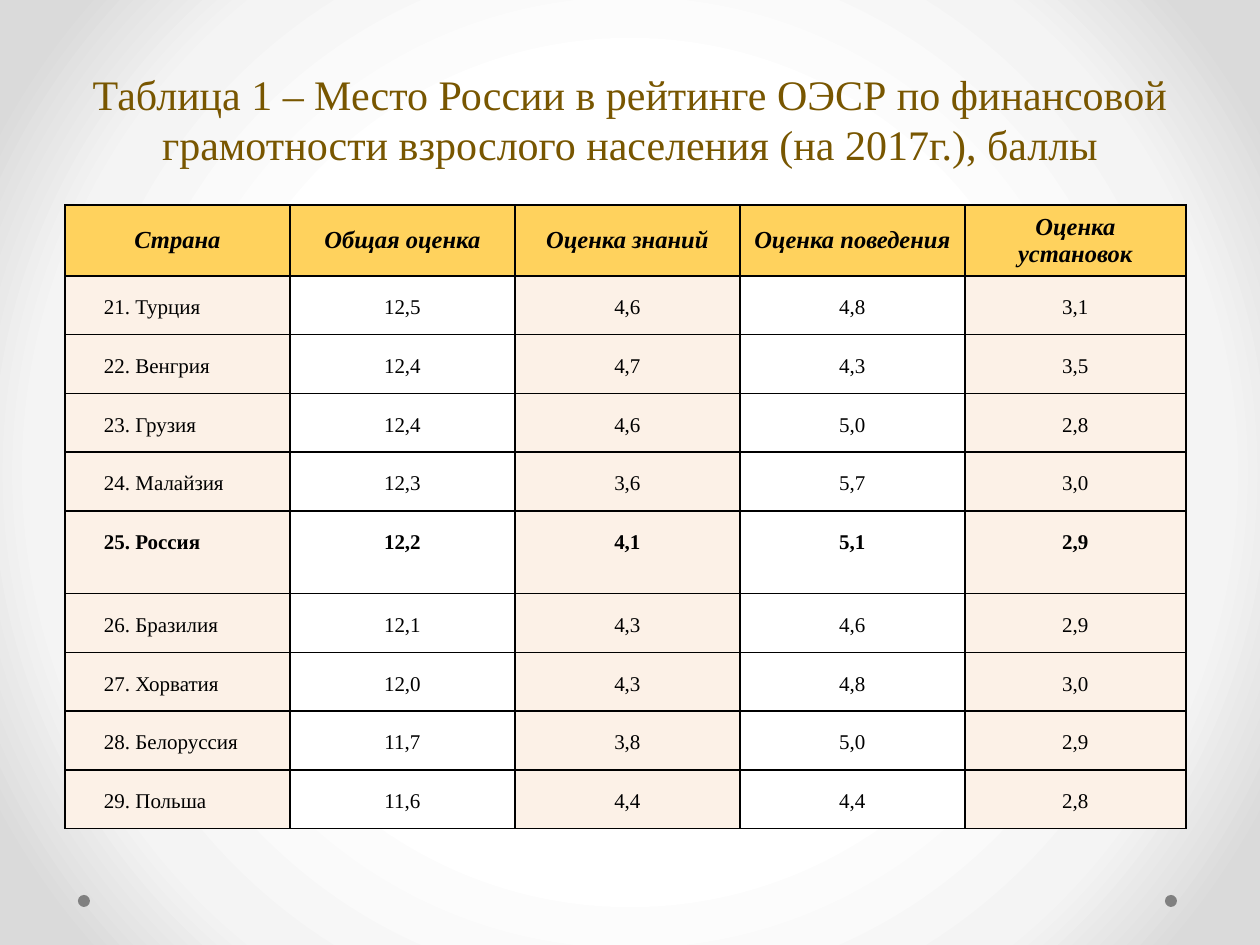
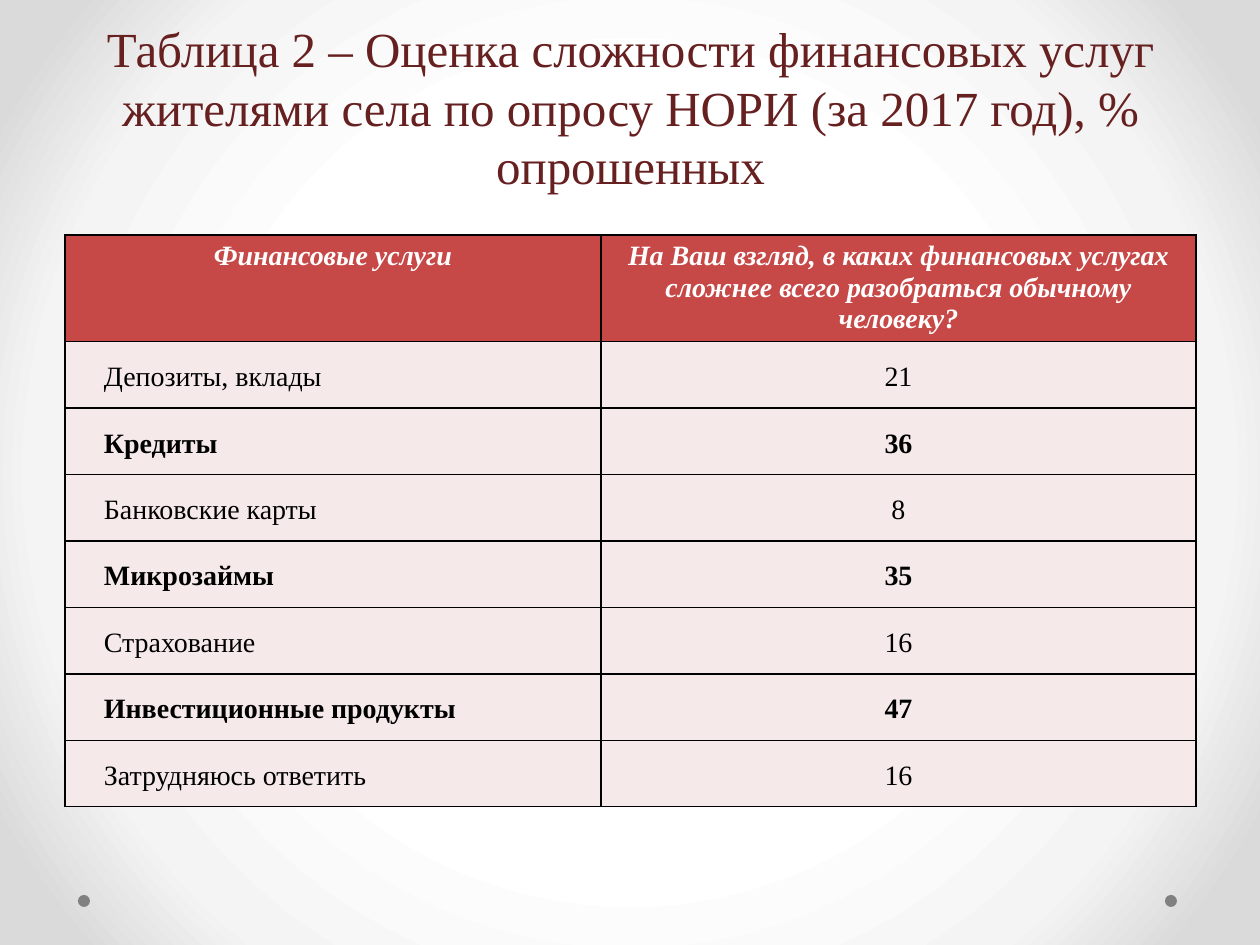
"""Build two slides with tables on financial literacy."""
import dataclasses

import pptx
import pptx.dml.color
import pptx.enum.shapes
import pptx.enum.text
import pptx.oxml
import pptx.oxml.ns
import pptx.util

SCALE = 914400 / 126
ALIGN = pptx.enum.text.PP_ALIGN
ANCHOR = pptx.enum.text.MSO_ANCHOR


@dataclasses.dataclass(frozen=True)
class Theme:
    face: str = "Times New Roman"
    ink: str = "000000"
    dot: str = "808080"
    glow: tuple = ((50, "FFFFFF"), (76, "F4F4F4"), (92, "DADADA"))
    rule: int = 1


@dataclasses.dataclass(frozen=True)
class Look:
    title: str
    title_size: int
    head: str
    head_ink: str
    head_size: int
    head_foot: int
    body_size: int
    bands: tuple
    anchor: object


THEME = Theme()
GOLD = Look("785600", 24, "FFD25D", "000000", 14, 6, 12, ("FCF1E7", "FFFFFF"), ANCHOR.MIDDLE)
RED = Look("672020", 28, "C64847", "FFFFFF", 16, 0, 16, ("F5E9E9",), ANCHOR.TOP)

RANKS = (
    ("Страна", "Общая оценка", "Оценка знаний", "Оценка поведения", "Оценка установок"),
    ("21. Турция", "12,5", "4,6", "4,8", "3,1"),
    ("22. Венгрия", "12,4", "4,7", "4,3", "3,5"),
    ("23. Грузия", "12,4", "4,6", "5,0", "2,8"),
    ("24. Малайзия", "12,3", "3,6", "5,7", "3,0"),
    ("25. Россия", "12,2", "4,1", "5,1", "2,9"),
    ("26. Бразилия", "12,1", "4,3", "4,6", "2,9"),
    ("27. Хорватия", "12,0", "4,3", "4,8", "3,0"),
    ("28. Белоруссия", "11,7", "3,8", "5,0", "2,9"),
    ("29. Польша", "11,6", "4,4", "4,4", "2,8"),
)
POLL = (
    ("Финансовые услуги",
     "На Ваш взгляд, в каких финансовых услугах сложнее всего разобраться обычному человеку?"),
    ("Депозиты, вклады", "21"),
    ("Кредиты", "36"),
    ("Банковские карты", "8"),
    ("Микрозаймы", "35"),
    ("Страхование", "16"),
    ("Инвестиционные продукты", "47"),
    ("Затрудняюсь ответить", "16"),
)


def px(size):
    return pptx.util.Emu(round(size * SCALE))


def tint(code):
    return pptx.dml.color.RGBColor.from_string(code)


def paint(fill, code):
    fill.solid()
    fill.fore_color.rgb = tint(code)


def style(para, size, color, align, bold=False, slant=False):
    para.alignment = align
    font = para.font
    font.name, font.size = THEME.face, pptx.util.Pt(size)
    font.bold, font.italic = bold, slant
    font.color.rgb = tint(color)


def add_glow(slide):
    stops = "".join(
        f'<a:gs pos="{pos * 1000}"><a:srgbClr val="{code}"/></a:gs>'
        for pos, code in THEME.glow)
    slide.element.cSld.insert(0, pptx.oxml.parse_xml(
        f'<p:bg {pptx.oxml.ns.nsdecls("p", "a")}><p:bgPr><a:gradFill rotWithShape="1">'
        f'<a:gsLst>{stops}</a:gsLst><a:path path="circle">'
        '<a:fillToRect l="50000" t="50000" r="50000" b="50000"/></a:path>'
        '</a:gradFill><a:effectLst/></p:bgPr></p:bg>'))


def add_dot(slide, left):
    dot = slide.shapes.add_shape(
        pptx.enum.shapes.MSO_SHAPE.OVAL, px(left), px(895), px(12), px(12))
    dot.shadow.inherit = False
    paint(dot.fill, THEME.dot)
    dot.line.fill.background()


def add_title(slide, look, text, box):
    frame = slide.shapes.add_textbox(*map(px, box)).text_frame
    frame.word_wrap = True
    frame.vertical_anchor = ANCHOR.BOTTOM
    para = frame.paragraphs[0]
    para.text = text
    style(para, look.title_size, look.title, ALIGN.CENTER)


def set_cell(cell, text, look, top, first, bold, fill):
    cell.text = text
    pads = (12, 6, 12, look.head_foot) if top else (39, 20, 39, 12)
    cell.margin_left, cell.margin_top, cell.margin_right, cell.margin_bottom = map(px, pads)
    cell.vertical_anchor = look.anchor if top else ANCHOR.TOP
    paint(cell.fill, look.head if top else fill)
    para = cell.text_frame.paragraphs[0]
    if top:
        style(para, look.head_size, look.head_ink, ALIGN.CENTER, True, True)
    else:
        style(para, look.body_size, THEME.ink, ALIGN.LEFT if first else ALIGN.CENTER, bold)


def add_rules(frame):
    width = pptx.util.Pt(THEME.rule)
    for props in frame.element.iter(pptx.oxml.ns.qn("a:tcPr")):
        for spot, side in enumerate("LRTB"):
            props.insert(spot, pptx.oxml.parse_xml(
                f'<a:ln{side} {pptx.oxml.ns.nsdecls("a")} w="{width}"><a:solidFill>'
                f'<a:srgbClr val="{THEME.ink}"/></a:solidFill></a:ln{side}>'))


def add_grid(slide, look, data, top, widths, height, head, bold, extra=0):
    frame = slide.shapes.add_table(
        len(data), len(widths), px(65), px(top), px(sum(widths)), px(height))
    table = frame.table
    table.first_row = table.horz_banding = False
    for col, width in zip(table.columns, widths):
        col.width = px(width)
    step = (height - head - extra * len(bold)) / (len(data) - 1)
    for row, texts in enumerate(data):
        strong = row in bold
        table.rows[row].height = px(step + extra * strong if row else head)
        for col, text in enumerate(texts):
            fill = look.bands[col % len(look.bands)]
            set_cell(table.cell(row, col), text, look, row == 0, col == 0, strong, fill)
    add_rules(frame)


def add_page(deck, look, title, box):
    slide = deck.slides.add_slide(deck.slide_layouts[6])
    add_glow(slide)
    for left in (1165, 78):
        add_dot(slide, left)
    add_title(slide, look, title, box)
    return slide


def main():
    deck = pptx.Presentation()
    deck.slide_width, deck.slide_height = px(1260), px(945)
    ranks = add_page(
        deck, GOLD,
        "Таблица 1 – Место России в рейтинге ОЭСР по финансовой грамотности "
        "взрослого населения (на 2017г.), баллы", (15, 16, 1230, 159))
    add_grid(ranks, GOLD, RANKS, 205, [225] * 4 + [221], 624, 71, {5}, 24)
    poll = add_page(
        deck, RED,
        "Таблица 2 – Оценка сложности финансовых услуг жителями села "
        "по опросу НОРИ (за 2017 год), % опрошенных", (25, 66, 1211, 135))
    add_grid(poll, RED, POLL, 235, [536, 595], 571, 106, {2, 4, 6})
    deck.save("out.pptx")


if __name__ == "__main__":
    main()
